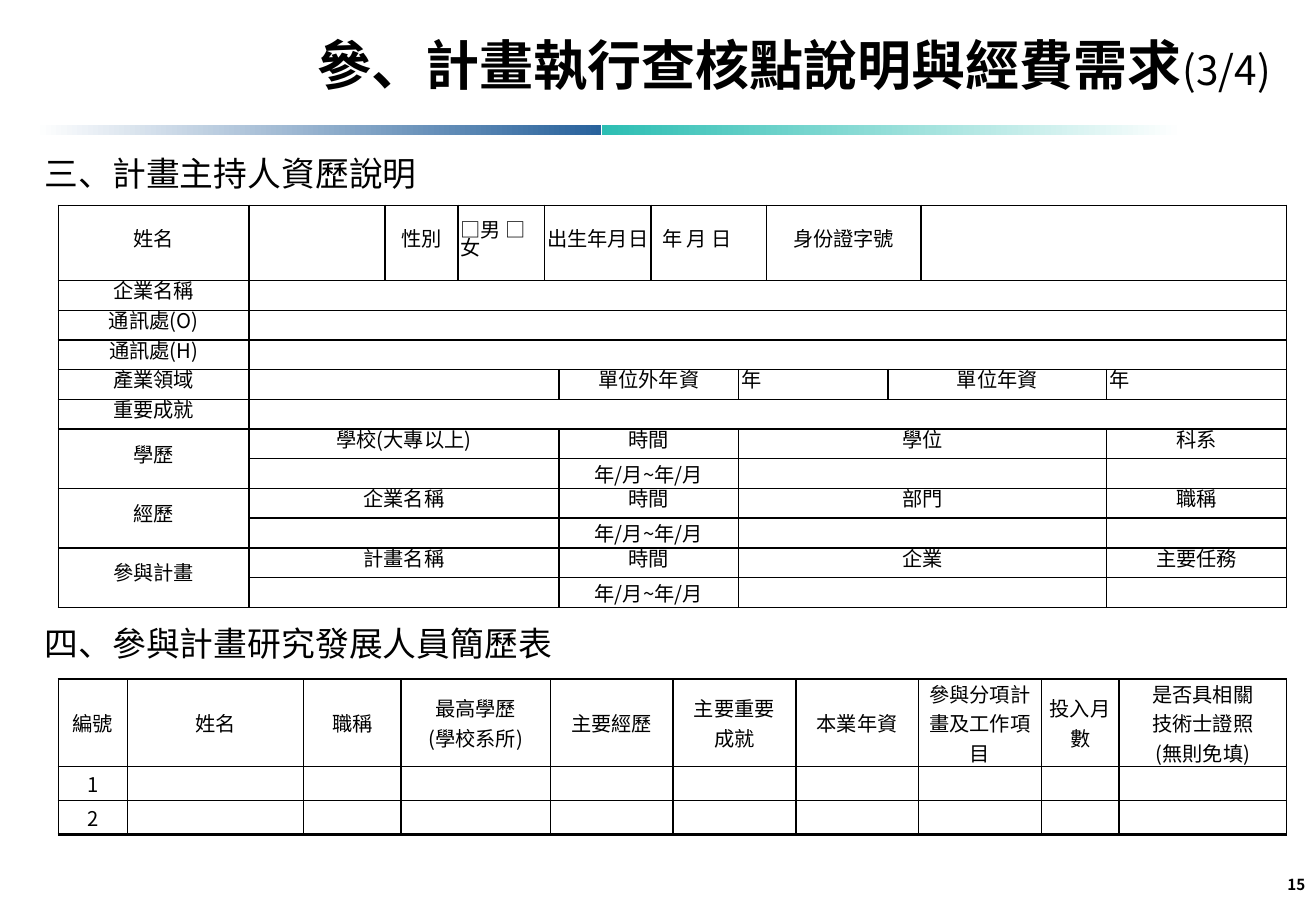
from lxml.etree import SubElement
from pptx import Presentation
from pptx.dml.color import RGBColor
from pptx.enum.shapes import MSO_SHAPE
from pptx.enum.text import MSO_ANCHOR, MSO_AUTO_SIZE, PP_ALIGN
from pptx.oxml.ns import qn
from pptx.util import Pt

PX = 9144  # 100 px to the inch
FONT = "Noto Sans CJK SC"
COLORS = {"ink": "000000", "paper": "FFFFFF", "blue": "28629C", "teal": "2CBEB3"}

TITLE = [("參、計畫執行查核點說明與經費需求", 32, True), ("(3/4)", 24, False)]
HEADINGS = [
    ("三、計畫主持人資歷說明", (27, 121, 329, 44)),
    ("四、參與計畫研究發展人員簡歷表", (27, 508, 441, 44)),
]
PAGE_NUMBER = "15"
BARS = [((29, 103, 466, 8), "paper", "blue"), ((495, 103, 478, 8), "teal", "paper")]

# Leader form: each row is a list of (text, columns spanned)
FORM_COLUMNS = [157, 112, 60, 71, 12, 76, 72, 23, 100, 27, 153, 148]
FORM_FIRST_ROW, FORM_HEIGHT = 62, 331
PERIOD = "年/月~年/月"
LEFT_ALIGNED = {"□男 □女": 2, "年 月 日": 9, "年": 2}  # text: left margin
FORM_TOP = [
    [("姓名", 1), ("", 1), ("性別", 1), ("□男 □女", 1), ("出生年月日", 2),
     ("年 月 日", 2), ("身份證字號", 2), ("", 2)],
    [("企業名稱", 1), ("", 11)],
    [("通訊處(O)", 1), ("", 11)],
    [("通訊處(H)", 1), ("", 11)],
    [("產業領域", 1), ("", 4), ("單位外年資", 2), ("年", 2), ("單位年資", 2), ("年", 1)],
    [("重要成就", 1), ("", 11)],
]
HISTORY = [
    ("學歷", "學校(大專以上)", "時間", "學位", "科系"),
    ("經歷", "企業名稱", "時間", "部門", "職稱"),
    ("參與計畫", "計畫名稱", "時間", "企業", "主要任務"),
]
HISTORY_SPANS = (1, 4, 2, 4, 1)

STAFF_COLUMNS = [57, 145, 80, 123, 101, 101, 101, 101, 64, 138]
STAFF_ROWS = [72, 28, 28]
STAFF_HEADER = ["編號", "姓名", "職稱", "最高學歷\n(學校系所)", "主要經歷", "主要重要\n成就",
                "本業年資", "參與分項計畫及工作項目", "投入月數", "是否具相關\n技術士證照\n(無則免填)"]
STAFF_NUMBERS = ["1", "2"]


def color(name):
    return RGBColor.from_string(COLORS[name])


def box(*lengths):
    return [length * PX for length in lengths]


def add_run(paragraph, text, size, bold=False):
    run = paragraph.add_run()
    run.text = text
    run.font.size = Pt(size)
    run.font.bold = bold
    run.font.name = FONT
    run.font.color.rgb = color("ink")
    SubElement(run.font._element, qn("a:ea"), typeface=FONT)


def add_text_box(bounds, text, size, bold=False):
    frame = slide.shapes.add_textbox(*box(*bounds)).text_frame
    add_run(frame.paragraphs[0], text, size, bold)
    return frame


def add_table(left, top, widths, heights):
    shape = slide.shapes.add_table(len(heights), len(widths),
                                   *box(left, top, sum(widths)), int(sum(heights) * PX))
    table = shape.table
    table.first_row = table.horz_banding = False
    for column, width in zip(table.columns, widths):
        column.width = width * PX
    for row, height in zip(table.rows, heights):
        row.height = int(height * PX)
    return table


def format_cell(cell, bottom_width=1):
    """Thin black borders, no fill, narrow margins, 12 pt when empty."""
    properties = cell._tc.get_or_add_tcPr()
    for side in "LRTB":
        width = bottom_width if side == "B" else 1
        line = SubElement(properties, qn("a:ln" + side), w=str(Pt(width)))
        fill = SubElement(line, qn("a:solidFill"))
        SubElement(fill, qn("a:srgbClr"), val=COLORS["ink"])
    cell.fill.background()
    cell.vertical_anchor = MSO_ANCHOR.MIDDLE
    cell.margin_left = cell.margin_right = 2 * PX
    cell.margin_top = cell.margin_bottom = 0
    if not cell.text_frame.text:
        SubElement(cell.text_frame.paragraphs[0]._p, qn("a:endParaRPr"), sz="1200")


def write_cell(cell, text, spacing=None):
    for index, line in enumerate(text.split("\n")):
        frame = cell.text_frame
        paragraph = frame.add_paragraph() if index else frame.paragraphs[0]
        paragraph.alignment = PP_ALIGN.LEFT if text in LEFT_ALIGNED else PP_ALIGN.CENTER
        if spacing:
            paragraph.line_spacing = spacing
        add_run(paragraph, line, 12)


presentation = Presentation()
presentation.slide_width, presentation.slide_height = box(1083, 750)
slide = presentation.slides.add_slide(presentation.slide_layouts[5])

for bounds, start, end in BARS:
    bar = slide.shapes.add_shape(MSO_SHAPE.RECTANGLE, *box(*bounds))
    bar.shadow.inherit = False
    bar.line.fill.background()
    bar.fill.gradient()
    bar.fill.gradient_angle = 0
    for stop, name in zip(bar.fill.gradient_stops, (start, end)):
        stop.color.rgb = color(name)

title = slide.shapes.title
title.left, title.top, title.width, title.height = box(200, 21, 907, 91)
title.text_frame.auto_size = MSO_AUTO_SIZE.NONE
title.text_frame.vertical_anchor = MSO_ANCHOR.TOP
title.text_frame.paragraphs[0].alignment = PP_ALIGN.CENTER
for text, size, bold in TITLE:
    add_run(title.text_frame.paragraphs[0], text, size, bold)

for text, bounds in HEADINGS:
    add_text_box(bounds, text, 20).word_wrap = False

number = add_text_box((840, 708, 244, 40), PAGE_NUMBER, 9, True)
number.word_wrap = True
number.vertical_anchor = MSO_ANCHOR.MIDDLE
number.paragraphs[0].alignment = PP_ALIGN.RIGHT

form_rows = list(FORM_TOP)
for labels in HISTORY:
    form_rows.append(list(zip(labels, HISTORY_SPANS)))
    form_rows.append(list(zip(("", "", PERIOD, "", ""), HISTORY_SPANS)))
other_rows = len(form_rows) - 1
row_height = (FORM_HEIGHT - FORM_FIRST_ROW) / other_rows
form = add_table(48, 169, FORM_COLUMNS, [FORM_FIRST_ROW] + [row_height] * other_rows)
for row, entries in enumerate(form_rows):
    column = 0
    for text, span in entries:
        cell = form.cell(row, column)
        if span > 1:
            cell.merge(form.cell(row, column + span - 1))
        if text:
            write_cell(cell, text, None if text == PERIOD else Pt(11))
        column += span
for row in range(len(FORM_TOP), len(form_rows), 2):
    form.cell(row, 0).merge(form.cell(row + 1, 0))
for cell in form.iter_cells():
    format_cell(cell)
    if cell.text_frame.text in LEFT_ALIGNED:
        cell.margin_left = LEFT_ALIGNED[cell.text_frame.text] * PX

staff = add_table(48, 559, STAFF_COLUMNS, STAFF_ROWS)
for column, text in enumerate(STAFF_HEADER):
    write_cell(staff.cell(0, column), text)
for row, text in enumerate(STAFF_NUMBERS, 1):
    write_cell(staff.cell(row, 0), text)
for row in range(len(STAFF_ROWS)):
    for column in range(len(STAFF_COLUMNS)):
        format_cell(staff.cell(row, column), 1.5 if row == len(STAFF_ROWS) - 1 else 1)

presentation.save("out.pptx")
